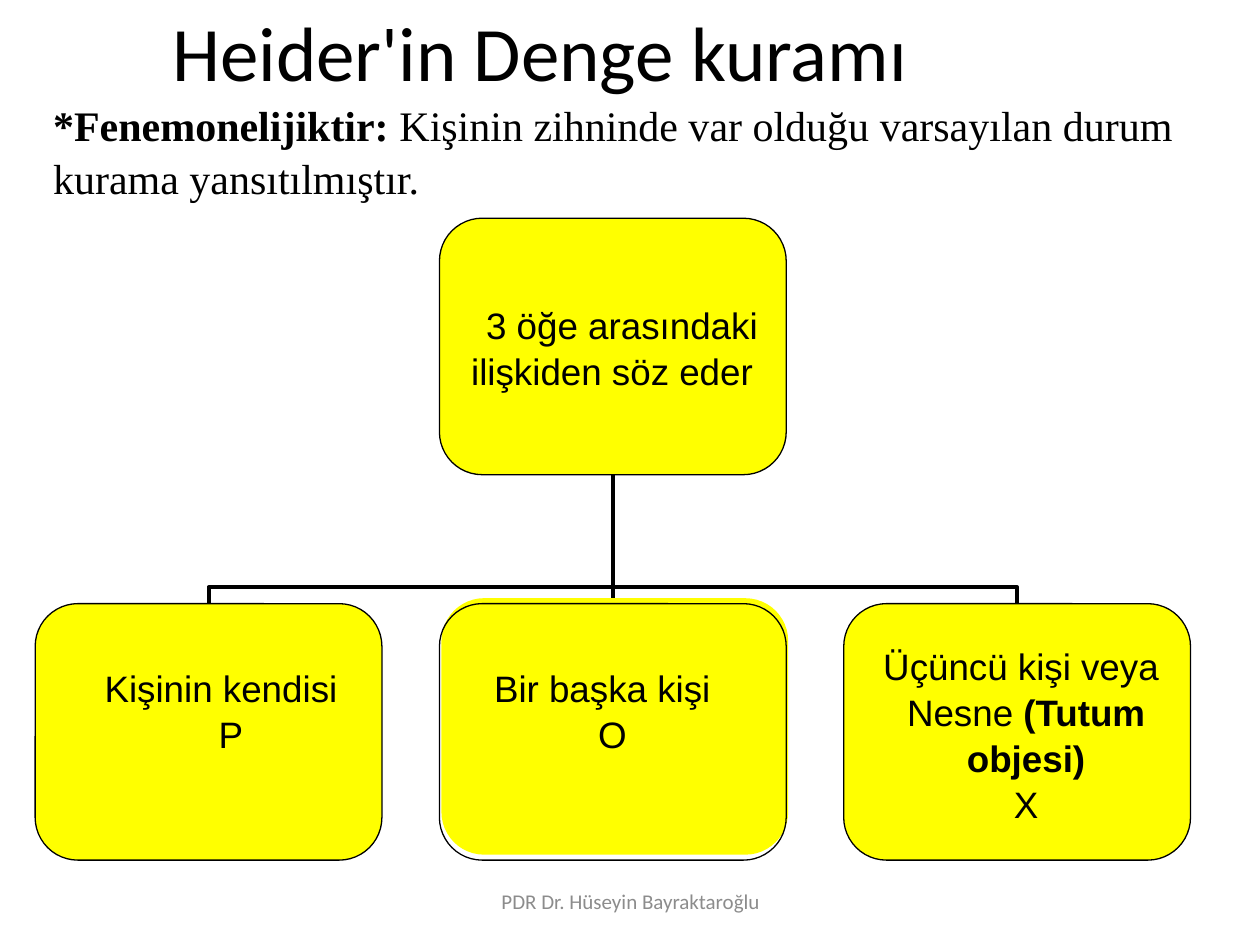
"""Build the slide on Heider's balance theory."""
from lxml.etree import SubElement
from pptx import Presentation
from pptx.dml.color import RGBColor
from pptx.enum.shapes import MSO_CONNECTOR, MSO_SHAPE
from pptx.enum.text import MSO_ANCHOR, PP_ALIGN
from pptx.oxml.ns import qn
from pptx.util import Cm, Pt

BLACK = RGBColor(0, 0, 0)
YELLOW = RGBColor(255, 255, 0)
GREY = RGBColor(0x8C, 0x8C, 0x8C)

TITLE = "Heider'in Denge kuramı"
INTRO = [("*Fenemonelijiktir: ", True),
         ("Kişinin zihninde var olduğu varsayılan durum kurama yansıtılmıştır.", False)]
FOOTER = "PDR Dr. Hüseyin Bayraktaroğlu"

NODE_WIDTH, NODE_HEIGHT = 6.99, 5.17
ROOT_TOP, CHILD_TOP, BUS_TOP = 4.4, 12.17, 11.84
CHILD_LEFTS = [0.71 + 8.15 * column for column in range(3)]
ROOT_LEFT = CHILD_LEFTS[1]
NODES = [
    {"outline": (ROOT_LEFT, ROOT_TOP), "fill": (ROOT_LEFT, ROOT_TOP),
     "label": (9.27, 6.07, 6.15, 1.8), "align": PP_ALIGN.LEFT,
     "lines": [([("3 öğe arasındaki ilişkiden söz eder", False)], 0.23, 0.3)]},
    {"outline": (CHILD_LEFTS[0], CHILD_TOP), "fill": (CHILD_LEFTS[0], CHILD_TOP),
     "label": (2.11, 13.38, 4.75, 1.8), "align": PP_ALIGN.LEFT,
     "lines": [([("Kişinin kendisi P", False)], 2.3, -2.3)]},
    {"outline": (CHILD_LEFTS[1], CHILD_TOP), "fill": (8.9, 12.06),
     "label": (9.96, 13.38, 4.45, 1.8), "align": PP_ALIGN.LEFT,
     "lines": [([("Bir başka kişi O", False)], 2.1, -2.1)]},
    {"outline": (CHILD_LEFTS[2], CHILD_TOP), "fill": (CHILD_LEFTS[2], CHILD_TOP),
     "label": (17.78, 12.95, 5.61, 3.58), "align": PP_ALIGN.CENTER,
     "lines": [([("Üçüncü kişi veya", False)], 0, 0),
               ([("Nesne ", False), ("(Tutum objesi)", True)], 0.2, 0),
               ([("X", False)], 0.2, 0)]},
]


def add_box(slide, left, top, width, height, inset_top=0):
    box = slide.shapes.add_textbox(Cm(left), Cm(top), Cm(width), Cm(height))
    frame = box.text_frame
    frame.word_wrap = True
    frame.margin_left = frame.margin_right = frame.margin_bottom = 0
    frame.margin_top = Cm(inset_top)
    return frame


def write(paragraph, spans, font, size, color=BLACK, align=PP_ALIGN.LEFT,
          margin=0, indent=0, spacing=1.0):
    paragraph.alignment = align
    paragraph.line_spacing = spacing
    paragraph.font.name, paragraph.font.size = font, Pt(size)
    paragraph.font.color.rgb = color
    properties = paragraph._p.get_or_add_pPr()
    properties.set("marL", str(Cm(margin)))
    properties.set("indent", str(Cm(indent)))
    for text, bold in spans:
        span = paragraph.add_run()
        span.text = text
        span.font.bold = bold


def add_node_shape(slide, position, fill=None, line=None):
    left, top = position
    node = slide.shapes.add_shape(MSO_SHAPE.ROUNDED_RECTANGLE, Cm(left), Cm(top),
                                  Cm(NODE_WIDTH), Cm(NODE_HEIGHT))
    node.shadow.inherit = False
    if fill is None:
        node.fill.background()
    else:
        node.fill.solid()
        node.fill.fore_color.rgb = fill
    if line is None:
        node.line.fill.background()
    else:
        node.line.color.rgb, node.line.width = line, Pt(0.75)


def add_branch(slide, child_left):
    root_x, child_x = (left + NODE_WIDTH / 2 for left in (ROOT_LEFT, child_left))
    root_y = ROOT_TOP + NODE_HEIGHT
    if child_x == root_x:
        branch = slide.shapes.add_connector(MSO_CONNECTOR.STRAIGHT, Cm(root_x), Cm(root_y),
                                            Cm(root_x), Cm(CHILD_TOP))
        SubElement(branch._element.spPr, qn("a:effectLst"))
    else:
        builder = slide.shapes.build_freeform(Cm(child_x), Cm(CHILD_TOP))
        corners = [(child_x, BUS_TOP), (root_x, BUS_TOP), (root_x, root_y)]
        builder.add_line_segments([(Cm(x), Cm(y)) for x, y in corners], close=False)
        branch = builder.convert_to_shape()
        branch.shadow.inherit = False
        branch.fill.background()
    branch.line.color.rgb, branch.line.width = BLACK, Pt(2.25)


def main():
    deck = Presentation()
    deck.slide_width, deck.slide_height = Cm(25.4), Cm(19.05)
    page = deck.slides.add_slide(deck.slide_layouts[6])

    heading = add_box(page, 1.07, 0, 23.29, 5.82, inset_top=0.1)
    write(heading.paragraphs[0], [(TITLE, None)], "Calibri", 44, margin=2.4)
    write(heading.add_paragraph(), INTRO, "Times New Roman", 24, spacing=1.05)

    footer = add_box(page, 8.69, 17.65, 8.05, 1.02)
    footer.vertical_anchor = MSO_ANCHOR.MIDDLE
    write(footer.paragraphs[0], [(FOOTER, None)], "Calibri", 12, GREY, PP_ALIGN.CENTER)

    for child_left in CHILD_LEFTS:
        add_branch(page, child_left)

    for node in NODES:
        add_node_shape(page, node["fill"], fill=YELLOW)
        add_node_shape(page, node["outline"], line=BLACK)
        label = add_box(page, *node["label"])
        for index, (spans, margin, indent) in enumerate(node["lines"]):
            para = label.add_paragraph() if index else label.paragraphs[0]
            write(para, spans, "Arial", 21, align=node["align"], margin=margin,
                  indent=indent, spacing=1.04)

    deck.save("out.pptx")


if __name__ == "__main__":
    main()
